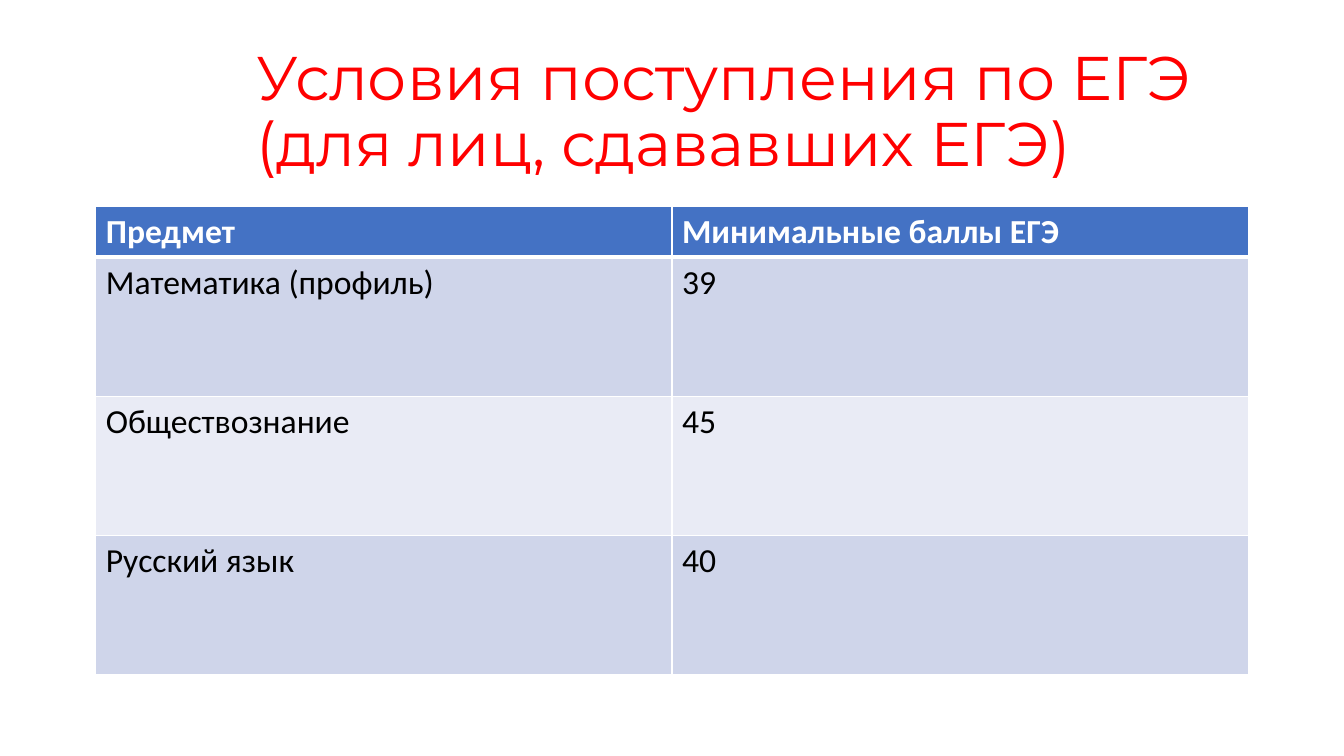
from dataclasses import dataclass

from lxml.etree import SubElement
from pptx import Presentation
from pptx.dml.color import RGBColor
from pptx.enum.text import MSO_ANCHOR
from pptx.oxml.ns import qn
from pptx.table import _Cell
from pptx.text.text import TextFrame
from pptx.util import Inches, Pt

RED = "FF0000"
WHITE = "FFFFFF"
BLACK = "000000"
HEADER_BLUE = "4472C4"
BANDS = ("CFD5EA", "E9EBF5")


@dataclass(frozen=True)
class TableRow:
    subject: str
    score: str
    height: float
    fill: str
    color: str = BLACK
    bold: bool = False
    bottom_border: float = 1


SCORES = (
    ("Математика (профиль)", "39"),
    ("Обществознание\u00a0", "45"),
    ("Русский язык", "40"),
)
ROWS = [
    TableRow("Предмет\u00a0", "Минимальные баллы ЕГЭ", 0.5, HEADER_BLUE, WHITE, True, 3),
    *(
        TableRow(subject, score, 1.38, BANDS[index % 2])
        for index, (subject, score) in enumerate(SCORES)
    ),
]


def rgb(value: str) -> RGBColor:
    return RGBColor.from_string(value)


def write(frame: TextFrame, text: str, *, size: float, font: str, color: str,
          bold: bool = False, line_spacing: float = 1.0) -> None:
    paragraph = frame.paragraphs[0]
    paragraph.line_spacing = line_spacing
    run = paragraph.add_run()
    run.text = text
    run.font.size = Pt(size)
    run.font.name = font
    run.font.bold = bold
    run.font.color.rgb = rgb(color)


def add_borders(cell: _Cell, top: float, bottom: float) -> None:
    """Add white cell borders; must run before the cell is filled."""
    properties = cell._tc.get_or_add_tcPr()
    for side, width in (("L", 1), ("R", 1), ("T", top), ("B", bottom)):
        line = SubElement(properties, qn(f"a:ln{side}"), w=str(Pt(width)))
        fill = SubElement(line, qn("a:solidFill"))
        SubElement(fill, qn("a:srgbClr"), val=WHITE)


def main() -> None:
    presentation = Presentation()
    presentation.slide_width = Inches(13.33)
    presentation.slide_height = Inches(7.5)
    slide = presentation.slides.add_slide(presentation.slide_layouts[6])

    heading = slide.shapes.add_textbox(
        Inches(2.45), Inches(0.4), Inches(9.96), Inches(1.45)
    ).text_frame
    heading.word_wrap = True
    heading.vertical_anchor = MSO_ANCHOR.MIDDLE
    write(heading, "Условия поступления по ЕГЭ (для лиц, сдававших ЕГЭ)",
          size=44, font="Montserrat", color=RED, line_spacing=0.9)

    score_table = slide.shapes.add_table(
        len(ROWS), 2, Inches(0.95), Inches(2.05), Inches(11.43),
        Inches(sum(row.height for row in ROWS))
    ).table
    border_above = 1.0
    for index, row in enumerate(ROWS):
        score_table.rows[index].height = Inches(row.height)
        for column, text in enumerate((row.subject, row.score)):
            cell = score_table.cell(index, column)
            add_borders(cell, border_above, row.bottom_border)
            cell.fill.solid()
            cell.fill.fore_color.rgb = rgb(row.fill)
            write(cell.text_frame, text, size=24, font="Calibri",
                  color=row.color, bold=row.bold)
        border_above = row.bottom_border

    presentation.save("out.pptx")


if __name__ == "__main__":
    main()
